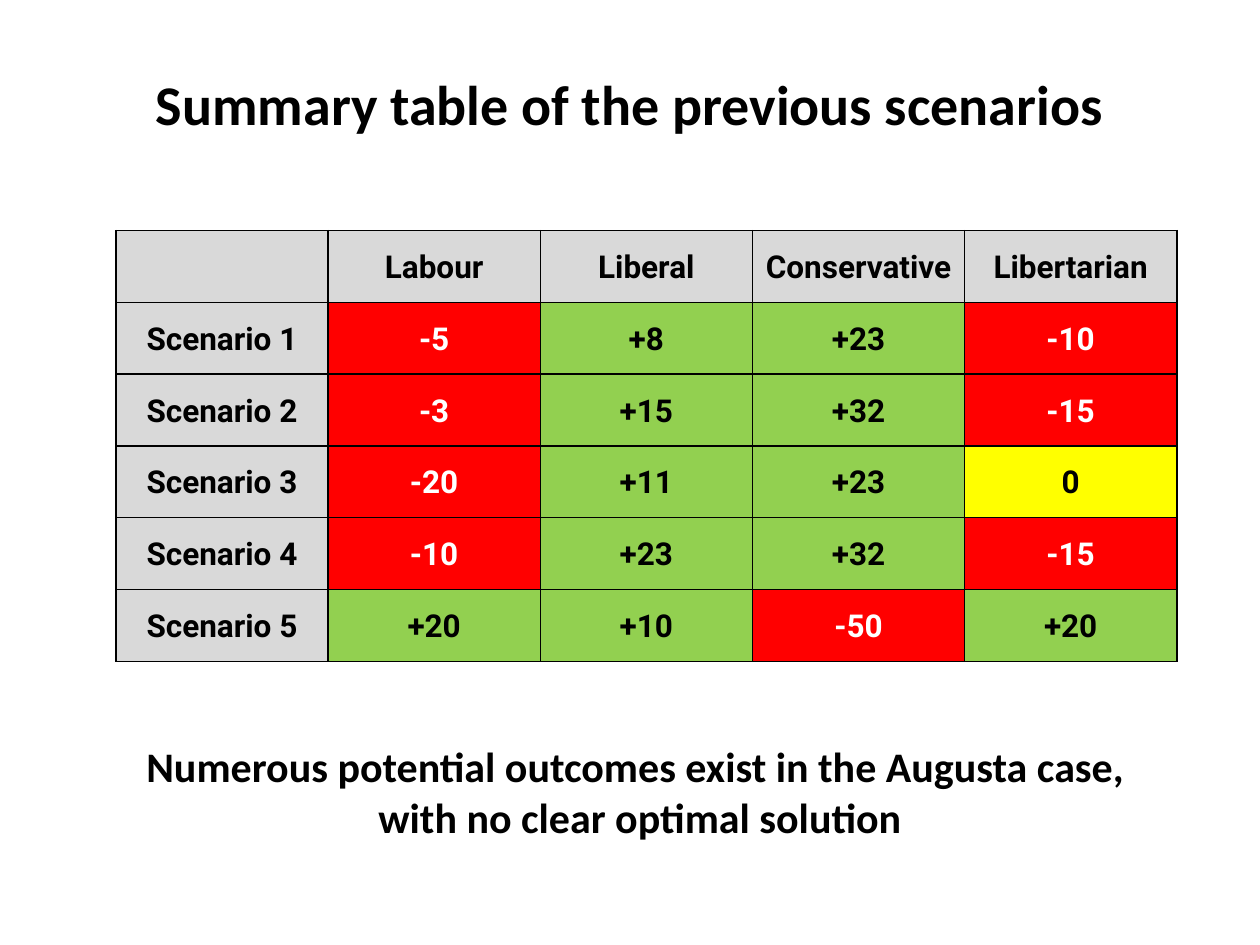
"""Build a slide that sums up party scores over five scenarios in a table."""
from lxml.etree import SubElement
from pptx import Presentation
from pptx.dml.color import RGBColor
from pptx.enum.text import MSO_ANCHOR, PP_ALIGN
from pptx.oxml.ns import qn
from pptx.util import Inches, Pt

COLORS = {"black": "000000", "white": "FFFFFF", "gray": "D9D9D9",
          "red": "FF0000", "green": "92D050", "yellow": "FFFF00"}
TITLE = ["Summary table of the previous scenarios"]
CLOSING = ["Numerous potential outcomes exist in the Augusta case, ",
           "with no clear optimal solution"]
PARTIES = ["Labour", "Liberal", "Conservative", "Libertarian"]
SCORES = [
    (-5, 8, 23, -10),
    (-3, 15, 32, -15),
    (-20, 11, 23, 0),
    (-10, 23, 32, -15),
    (20, 10, -50, 20),
]


def color(name):
    return RGBColor.from_string(COLORS[name])


def write(frame, lines, size, font="Calibri", ink="black", spacing=None, after=None):
    for i, line in enumerate(lines):
        para = frame.add_paragraph() if i else frame.paragraphs[0]
        para.alignment = PP_ALIGN.CENTER
        para.line_spacing = spacing
        para.space_after = after
        run = para.add_run()
        run.text = line
        run.font.name = font
        run.font.size = Pt(size)
        run.font.bold = True
        run.font.color.rgb = color(ink)


def add_text(slide, lines, box, size):
    frame = slide.shapes.add_textbox(*map(Inches, box)).text_frame
    frame.word_wrap = True
    write(frame, lines, size)


def add_borders(cell):
    props = cell._tc.get_or_add_tcPr()
    for i, side in enumerate(("a:lnL", "a:lnR", "a:lnT", "a:lnB")):
        line = props.makeelement(qn(side), {"w": str(Pt(1))})
        fill = SubElement(line, qn("a:solidFill"))
        SubElement(fill, qn("a:srgbClr"), val=COLORS["black"])
        props.insert(i, line)


def fill_cell(cell, text, back, ink="black"):
    cell.fill.solid()
    cell.fill.fore_color.rgb = color(back)
    cell.vertical_anchor = MSO_ANCHOR.MIDDLE
    cell.margin_left = cell.margin_right = Inches(0.07)
    cell.margin_top = cell.margin_bottom = 0
    add_borders(cell)
    if text:
        write(cell.text_frame, [text], 18, font="Roboto", ink=ink,
              spacing=1.07, after=Pt(8))


def fill_score(cell, score):
    if score < 0:
        fill_cell(cell, str(score), "red", ink="white")
    elif score > 0:
        fill_cell(cell, f"+{score}", "green")
    else:
        fill_cell(cell, "0", "yellow")


def add_scores(slide, box):
    rows, cols = len(SCORES) + 1, len(PARTIES) + 1
    table = slide.shapes.add_table(rows, cols, *map(Inches, box)).table
    table.first_row = table.horz_banding = False
    for col, party in enumerate(["", *PARTIES]):
        fill_cell(table.cell(0, col), party, "gray")
    for row, scores in enumerate(SCORES, 1):
        fill_cell(table.cell(row, 0), f"Scenario {row}", "gray")
        for col, score in enumerate(scores, 1):
            fill_score(table.cell(row, col), score)


def main():
    deck = Presentation()
    deck.slide_width, deck.slide_height = Inches(10), Inches(7.5)
    slide = deck.slides.add_slide(deck.slide_layouts[6])
    add_text(slide, TITLE, (0.5, 0.5, 9, 1.25), 32)
    add_text(slide, CLOSING, (0.58, 5.83, 9, 0.91), 24)
    add_scores(slide, (0.92, 1.83, 8.42, 3.42))
    deck.save("out.pptx")


if __name__ == "__main__":
    main()
